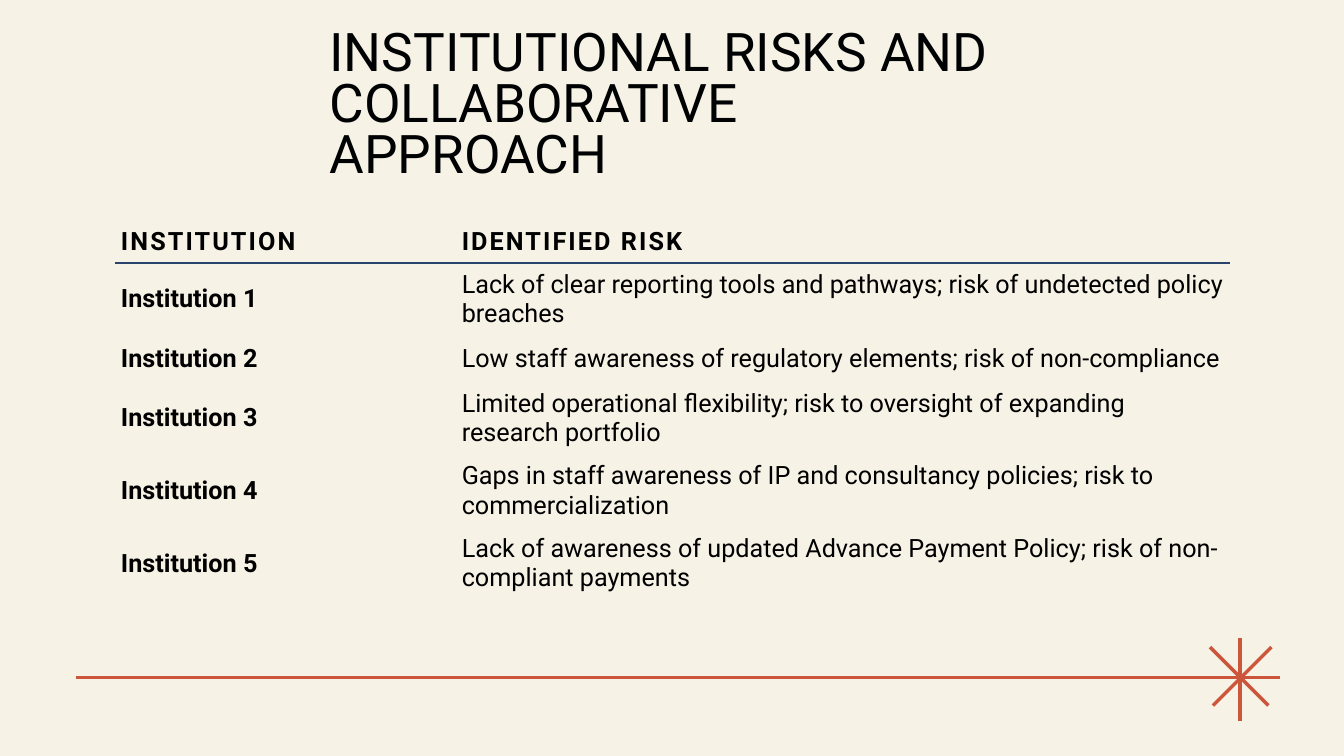
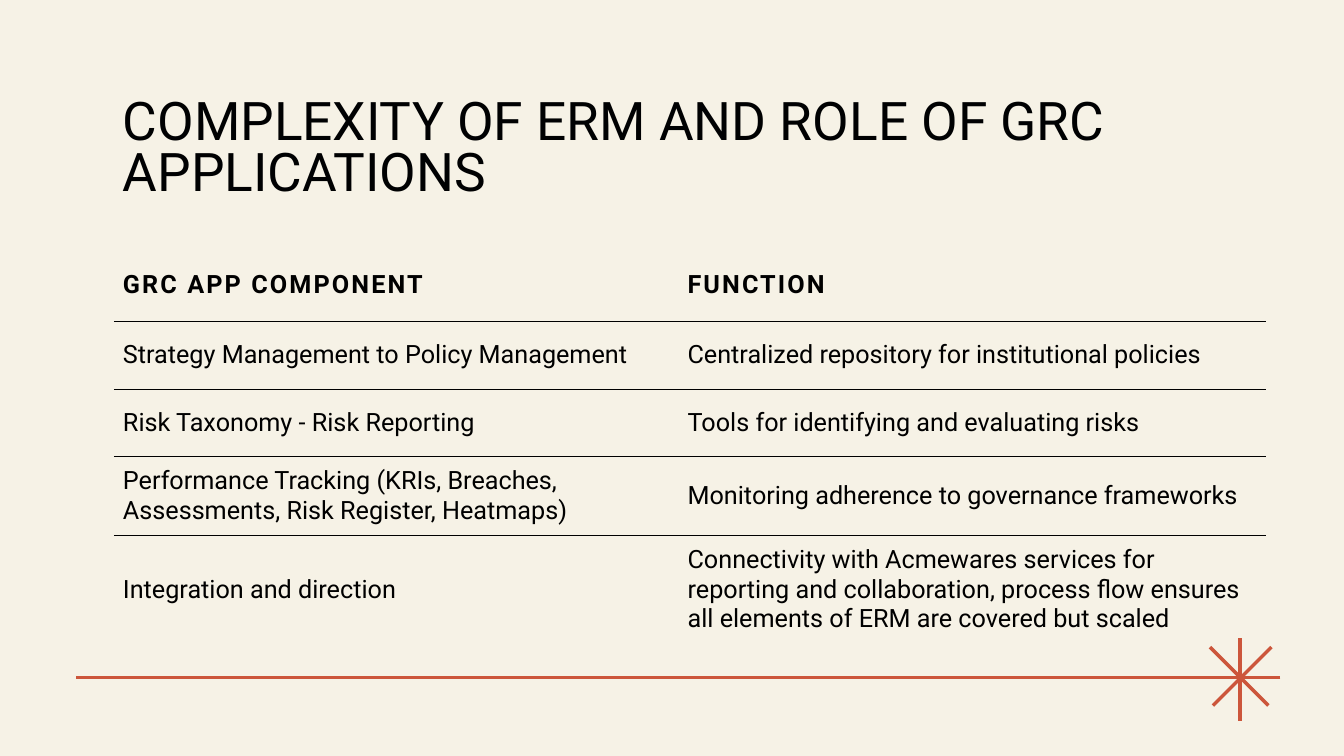
from pptx import Presentation
from pptx.dml.color import RGBColor
from pptx.enum.shapes import MSO_CONNECTOR
from pptx.enum.text import MSO_ANCHOR
from pptx.oxml.ns import qn
from pptx.util import Inches, Pt
from lxml.etree import SubElement

PLAIN = "{2D5ABB26-0587-4C30-8999-92F81FD0307C}"


def color(value):
    return RGBColor.from_string(value)


class Deck:
    font = "Roboto"
    paper = "F6F2E6"
    ink = "000000"
    dark = "000102"
    rust = "CC563B"
    rays = [
        (12.3, 6.33, 12.3, 7.15),
        (12.7, 6.72, 0.75, 6.72),
        (12.61, 6.42, 12.03, 7),
        (12.58, 7, 12, 6.42),
    ]

    def __init__(self):
        self.show = Presentation()
        self.show.slide_width = Inches(13.33)
        self.show.slide_height = Inches(7.5)
        self.slide = None

    def page(self, title, left, top, width):
        self.slide = self.show.slides.add_slide(self.show.slide_layouts[6])
        fill = self.slide.background.fill
        fill.solid()
        fill.fore_color.rgb = color(self.paper)
        for ray in self.rays:
            self.line(*ray)
        self.title(title, left, top, width)

    def line(self, *ends):
        line = self.slide.shapes.add_connector(
            MSO_CONNECTOR.STRAIGHT, *[Inches(end) for end in ends])
        line.line.color.rgb = color(self.rust)
        line.line.width = Pt(2.5)
        SubElement(line._element.spPr, qn("a:effectLst"))

    def style(self, para, size, tint, bold=False, space=0):
        for run in para.runs:
            run.font.name = self.font
            run.font.size = Pt(size)
            run.font.bold = bold
            run.font.color.rgb = color(tint)
            if space:
                run.font._element.set("spc", str(int(space * 100)))

    def title(self, text, left, top, width):
        box = self.slide.shapes.add_textbox(
            Inches(left), Inches(top), Inches(width), Inches(1.67))
        frame = box.text_frame
        frame.word_wrap = True
        frame.vertical_anchor = MSO_ANCHOR.BOTTOM
        frame.text = text
        para = frame.paragraphs[0]
        para.line_spacing = 0.8
        self.style(para, 38, self.dark)

    def rule(self, cell, tint, width):
        props = cell._tc.get_or_add_tcPr()
        edge = SubElement(props, qn("a:lnB"), w=str(Pt(width)))
        fill = SubElement(edge, qn("a:solidFill"))
        SubElement(fill, qn("a:srgbClr"), val=tint)

    def cell(self, cell, text, inset, head, bold, rule):
        if rule:
            self.rule(cell, *rule)
        cell.fill.background()
        cell.vertical_anchor = MSO_ANCHOR.MIDDLE
        cell.margin_left = cell.margin_right = Inches(inset)
        cell.margin_top = cell.margin_bottom = Inches(inset)
        cell.text_frame.text = text
        self.style(cell.text_frame.paragraphs[0], 18, self.ink,
                   head or bold, 1.5 if head else 0)

    def table(self, data, left, top, cols, rows, inset, rule, ruled, labels=False):
        table = self.slide.shapes.add_table(
            len(rows), len(cols), Inches(left), Inches(top),
            Inches(sum(cols)), Inches(sum(rows))).table
        table._tbl.tblPr.find(qn("a:tableStyleId")).text = PLAIN
        table.horz_banding = False
        for col, width in zip(table.columns, cols):
            col.width = Inches(width)
        for i, (row, height, texts) in enumerate(zip(table.rows, rows, data)):
            row.height = Inches(height)
            for j, (cell, text) in enumerate(zip(row.cells, texts)):
                self.cell(cell, text, inset, i == 0, labels and j == 0,
                          rule if i < ruled else None)


def main():
    deck = Deck()

    deck.page("INSTITUTIONAL RISKS AND COLLABORATIVE APPROACH", 3.17, 0.2, 7)
    risks = [
        "Lack of clear reporting tools and pathways; risk of undetected policy breaches",
        "Low staff awareness of regulatory elements; risk of non-compliance",
        "Limited operational flexibility; risk to oversight of expanding research portfolio",
        "Gaps in staff awareness of IP and consultancy policies; risk to commercialization",
        "Lack of awareness of updated Advance Payment Policy; risk of non-compliant payments",
    ]
    data = [("INSTITUTION", "IDENTIFIED RISK")]
    data += [(f"Institution {n}", risk) for n, risk in enumerate(risks, 1)]
    deck.table(data, 1.14, 2.19, [3.38, 7.68],
               [0.41, 0.71, 0.46, 0.71, 0.71, 0.71],
               0.06, ("28436C", 2.25), 1, labels=True)

    deck.page("COMPLEXITY OF ERM AND ROLE OF GRC APPLICATIONS", 1.12, 0.38, 11.43)
    data = [
        ("GRC APP COMPONENT", "FUNCTION"),
        ("Strategy Management to Policy Management",
         "Centralized repository for institutional policies"),
        ("Risk Taxonomy - Risk Reporting",
         "Tools for identifying and evaluating risks"),
        ("Performance Tracking (KRIs, Breaches, Assessments, Risk Register, Heatmaps)",
         "Monitoring adherence to governance frameworks"),
        ("Integration and direction",
         "Connectivity with Acmewares services for reporting and collaboration, "
         "process flow ensures all elements of ERM are covered but scaled"),
    ]
    deck.table(data, 1.13, 2.47, [5.6, 5.83], [0.72, 0.67, 0.67, 0.75, 1.06],
               0.09, (deck.ink, 0.5), len(data) - 1)

    deck.show.save("out.pptx")


if __name__ == "__main__":
    main()
